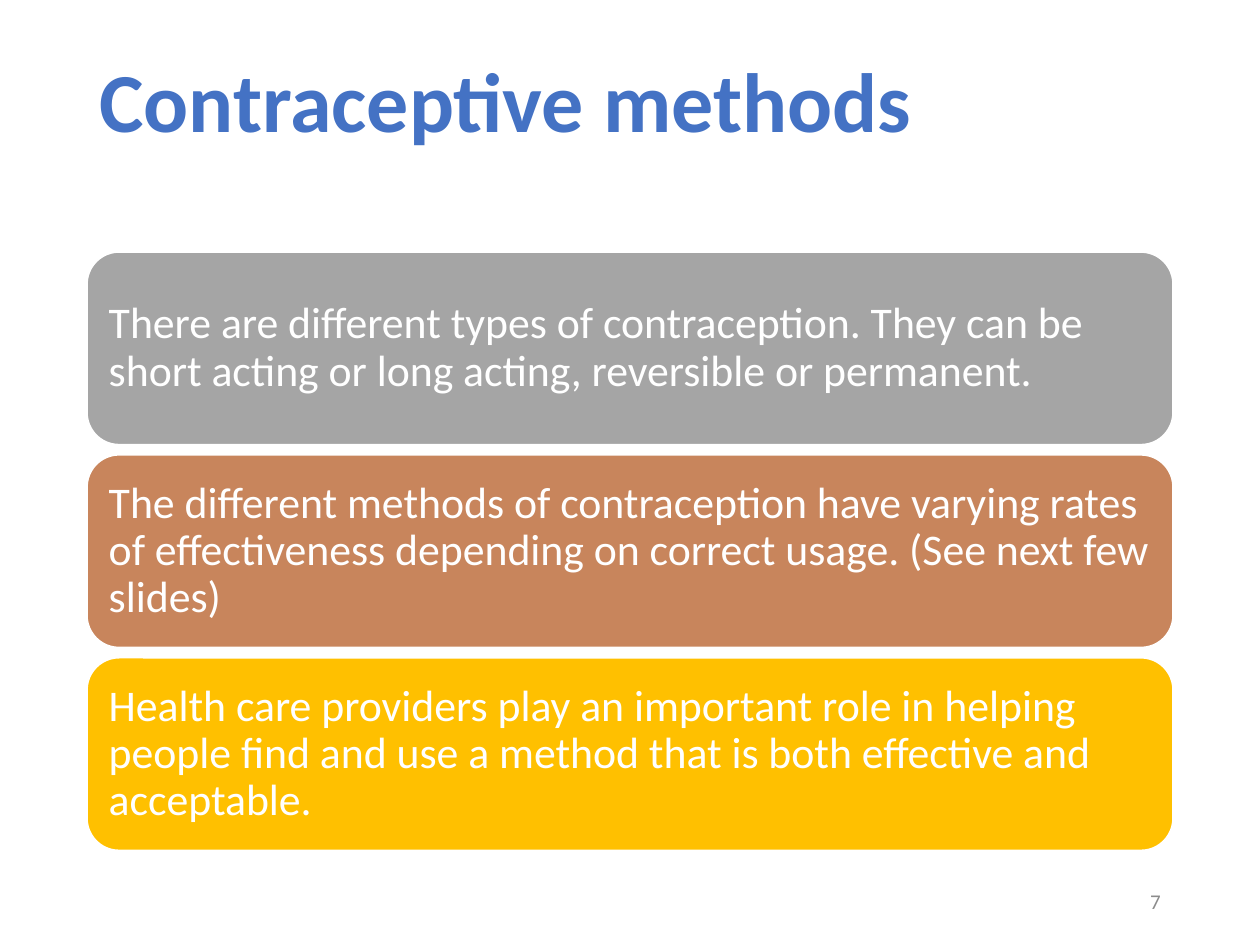
from pptx import Presentation
from pptx.dml.color import RGBColor
from pptx.enum.shapes import MSO_SHAPE as SHAPE
from pptx.enum.text import MSO_ANCHOR as ANCHOR, PP_ALIGN as ALIGN
from pptx.util import Inches, Pt

BLUE = RGBColor(0x44, 0x72, 0xC4)
GREY = RGBColor(0xA5, 0xA5, 0xA5)
COPPER = RGBColor(0xC8, 0x85, 0x5C)
GOLD = RGBColor(0xFF, 0xC0, 0x00)
WHITE = RGBColor(0xFF, 0xFF, 0xFF)
PAGE_GREY = RGBColor(0x8C, 0x8C, 0x8C)

FONT = "Calibri"
LEFT, WIDTH = 0.69, 8.62
ROW_TOP, ROW_HEIGHT, ROW_STEP = 2, 1.53, 1.61

MESSAGES = [
    ("There are different types of contraception. They can be short acting "
     "or long acting, reversible or permanent.", GREY),
    ("The different methods of contraception have varying rates of "
     "effectiveness depending on correct usage. (See next few slides)", COPPER),
    ("Health care providers play an important role in helping people find "
     "and use a method that is both effective and acceptable.", GOLD),
]


def write(sp, text, size, color, bold=False, align=ALIGN.LEFT, spacing=0.9):
    tf = sp.text_frame
    tf.text = text
    tf.word_wrap = True
    tf.vertical_anchor = ANCHOR.MIDDLE
    p = tf.paragraphs[0]
    p.alignment = align
    p.line_spacing = spacing
    font = p.runs[0].font
    font.name, font.size, font.bold = FONT, Pt(size), bold
    font.color.rgb = color


def add_label(s, box, text, size, color, **style):
    sp = s.shapes.add_textbox(*map(Inches, box))
    write(sp, text, size, color, **style)


def add_panel(s, row, text, fill):
    box = (LEFT, ROW_TOP + row * ROW_STEP, WIDTH, ROW_HEIGHT)
    sp = s.shapes.add_shape(SHAPE.ROUNDED_RECTANGLE, *map(Inches, box))
    sp.shadow.inherit = False
    sp.fill.solid()
    sp.fill.fore_color.rgb = fill
    sp.line.color.rgb = WHITE
    sp.line.width = Pt(1)
    write(sp, text, 25, WHITE)
    # The rounded rectangle already insets its text by about 0.07 inch
    tf = sp.text_frame
    tf.margin_left = tf.margin_right = Inches(0.1)
    tf.margin_top = tf.margin_bottom = Inches(0.1)


def main():
    prs = Presentation()
    prs.slide_width, prs.slide_height = Inches(10), Inches(7.5)
    s = prs.slides.add_slide(prs.slide_layouts[6])

    # Title
    add_label(s, (LEFT, 0.11, WIDTH, 1.45), "Contraceptive methods", 48, BLUE,
              bold=True)

    # Stacked messages
    for row, (text, fill) in enumerate(MESSAGES):
        add_panel(s, row, text, fill)

    # Page number
    add_label(s, (7.06, 6.95, 2.25, 0.4), "7", 12, PAGE_GREY,
              align=ALIGN.RIGHT, spacing=1.0)

    prs.save("out.pptx")


if __name__ == "__main__":
    main()
